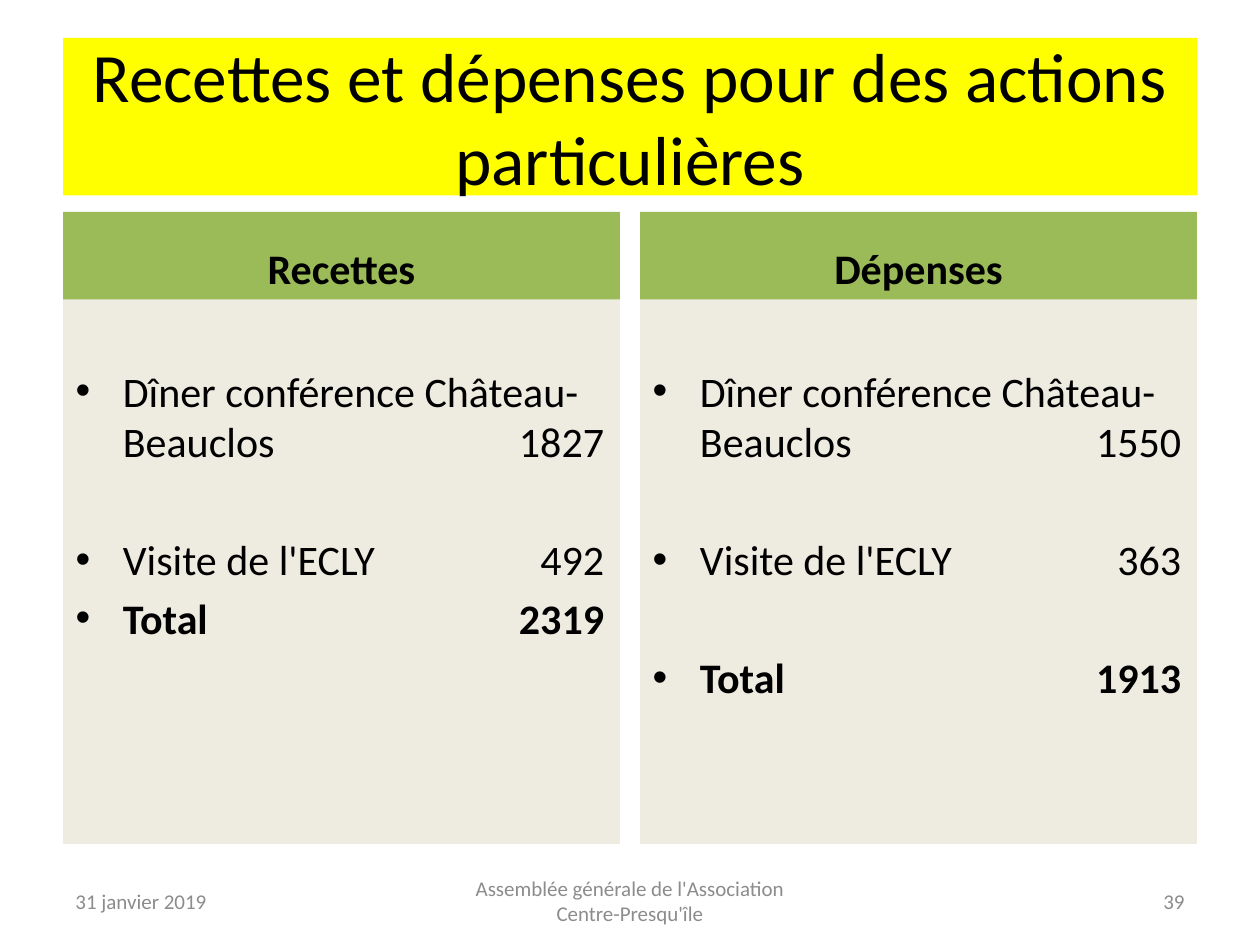
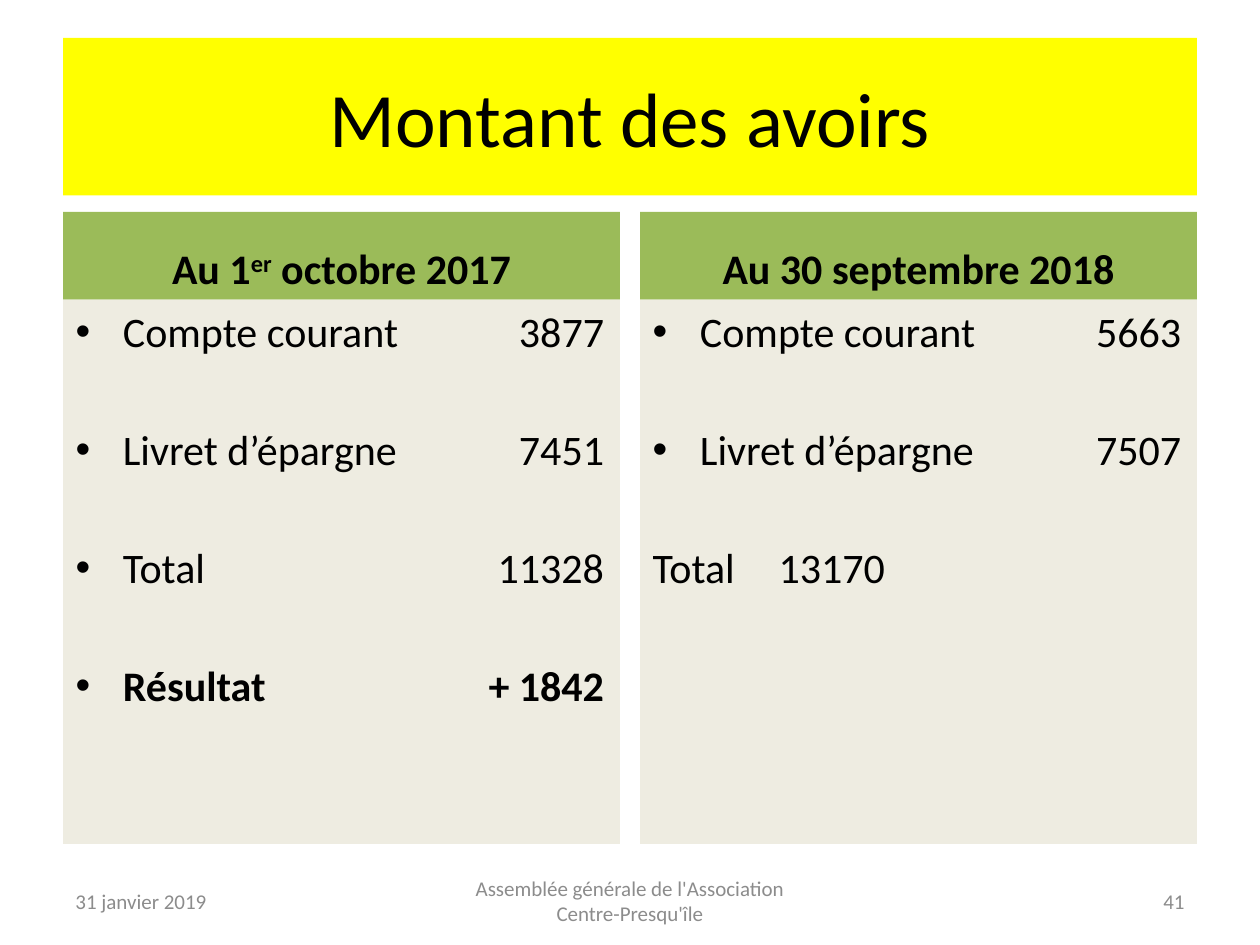
import pptx
import pptx.util
import pptx.dml.color
import pptx.enum.text
import pptx.oxml.ns
import lxml.etree

Pt = pptx.util.Pt
Align = pptx.enum.text.PP_ALIGN
Anchor = pptx.enum.text.MSO_ANCHOR

DATE = "31 janvier 2019"
EVENT = "Assemblée générale de l'Association Centre-Presqu'île"
DINNER = "Dîner conférence Château-Beauclos"
VISIT = "Visite de l'ECLY"
BANK = "Compte courant"
SAVINGS = "Livret d’épargne"

SLIDES = [
    dict(title="Recettes et dépenses pour des actions particulières",
         size=39.6, page="39", lead=1, columns=[
             ("Recettes", [
                 dict(label=DINNER, amount="1827"),
                 dict(label=VISIT, amount="492", skip=1),
                 dict(label="Total", amount="2319", bold=True)]),
             ("Dépenses", [
                 dict(label=DINNER, amount="1550"),
                 dict(label=VISIT, amount="363", skip=1),
                 dict(label="Total", amount="1913", skip=1, bold=True)])]),
    dict(title="Montant des avoirs", size=44, page="41", lead=0, columns=[
        ("Au 1^er^ octobre 2017", [
            dict(label=BANK, amount="3877"),
            dict(label=SAVINGS, amount="7451", skip=1),
            dict(label="Total", amount="11328", skip=1),
            dict(label="Résultat", amount="+ 1842", skip=1, bold=True)]),
        ("Au 30 septembre 2018", [
            dict(label=BANK, amount="5663"),
            dict(label=SAVINGS, amount="7507", skip=1),
            dict(label="Total", amount="13170", skip=1, bullet=False)])]),
]

FONT = "Calibri"
BLACK, GREY = "000000", "8C8C8C"
YELLOW, GREEN, CREAM = "FFFF00", "9BBB59", "EEECE1"
LEFT, WIDTH, GAP = 36, 648, 11.5
COL = (WIDTH - GAP) / 2
HEAD_TOP, HEAD_HIGH = 121, 50.25
LIST_TOP, LIST_HIGH = HEAD_TOP + HEAD_HIGH, 311
FOOT_TOP, FOOT_HIGH = 500.5, 28.75
SIDE, MIDDLE = 168, 228
LINE, SPACE, STOP = 33.8, 4.8, 302


def color(code):
    return pptx.dml.color.RGBColor.from_string(code)


def place(shape, left, top, width, height, fill=None, anchor=Anchor.TOP):
    shape.left, shape.top = Pt(left), Pt(top)
    shape.width, shape.height = Pt(width), Pt(height)
    if fill:
        shape.fill.solid()
        shape.fill.fore_color.rgb = color(fill)
    frame = shape.text_frame
    frame.word_wrap = True
    frame.auto_size = pptx.enum.text.MSO_AUTO_SIZE.NONE
    frame.vertical_anchor = anchor
    return frame


def write(para, text, size=24, ink=BLACK, bold=False, align=Align.LEFT,
          before=0, bullet=True, stop=None):
    para.alignment = align
    para.space_before = Pt(before)
    props = para._p.get_or_add_pPr()
    if not bullet:
        props.set("marL", "0")
        props.set("indent", "0")
        lxml.etree.SubElement(props, pptx.oxml.ns.qn("a:buNone"))
    if stop:
        tabs = lxml.etree.SubElement(props, pptx.oxml.ns.qn("a:tabLst"))
        lxml.etree.SubElement(tabs, pptx.oxml.ns.qn("a:tab"),
                              pos=str(int(Pt(stop))), algn="r")
    for index, part in enumerate(text.split("^")):
        run = para.add_run()
        run.text = part
        run.font.name, run.font.size = FONT, Pt(size)
        run.font.bold = bold
        run.font.color.rgb = color(ink)
        if index % 2:
            run._r.get_or_add_rPr().set("baseline", "30000")


def fill_list(frame, rows, lead):
    frame.margin_top = Pt(3.6 + lead * LINE)
    frame.margin_right = Pt(-18)
    for index, row in enumerate(rows):
        para = frame.add_paragraph() if index else frame.paragraphs[0]
        before = SPACE + row.get("skip", 0) * LINE if index else 0
        write(para, row["label"] + "\t" + row["amount"], before=before,
              bold=row.get("bold", False), bullet=row.get("bullet", True),
              stop=STOP)


def add_foot(slide, page):
    parts = [
        (DATE, LEFT, SIDE, Align.LEFT),
        (EVENT, LEFT + (WIDTH - MIDDLE) / 2, MIDDLE, Align.CENTER),
        (page, LEFT + WIDTH - SIDE, SIDE, Align.RIGHT),
    ]
    for text, left, width, align in parts:
        box = slide.shapes.add_textbox(0, 0, 0, 0)
        frame = place(box, left, FOOT_TOP, width, FOOT_HIGH, anchor=Anchor.MIDDLE)
        write(frame.paragraphs[0], text, size=12, ink=GREY, align=align)


def add_slide(deck, data):
    slide = deck.slides.add_slide(deck.slide_layouts[4])
    holders = slide.placeholders
    frame = place(slide.shapes.title, LEFT, 21.6, WIDTH, 90, YELLOW, Anchor.MIDDLE)
    write(frame.paragraphs[0], data["title"], size=data["size"], align=Align.CENTER)
    for index, (head, rows) in enumerate(data["columns"]):
        left = LEFT + index * (COL + GAP)
        frame = place(holders[2 * index + 1], left, HEAD_TOP, COL, HEAD_HIGH,
                      GREEN, Anchor.BOTTOM)
        write(frame.paragraphs[0], head, bold=True, align=Align.CENTER)
        frame = place(holders[2 * index + 2], left, LIST_TOP, COL, LIST_HIGH, CREAM)
        fill_list(frame, rows, data["lead"])
    add_foot(slide, data["page"])


def main():
    deck = pptx.Presentation()
    deck.slide_width, deck.slide_height = Pt(720), Pt(540)
    for data in SLIDES:
        add_slide(deck, data)
    deck.save("out.pptx")


if __name__ == "__main__":
    main()
